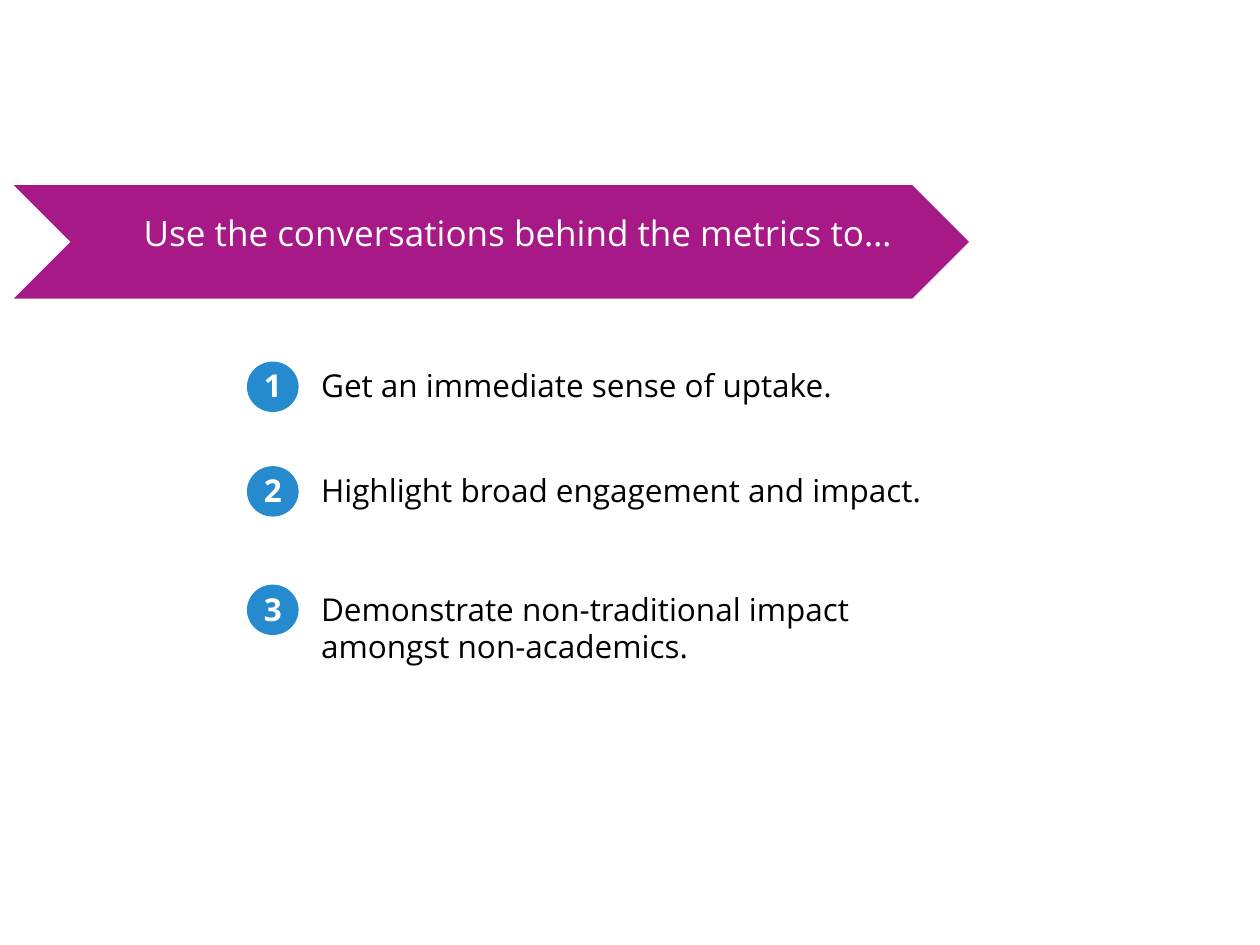
from dataclasses import dataclass

from pptx import Presentation, util as u
from pptx.dml.color import RGBColor
from pptx.enum import shapes, text

FONT = "Open Sans"
PURPLE, BLUE, WHITE, BLACK = "A61987", "268ACE", "FFFFFF", "000000"
BADGE_LEFT, BADGE_WIDTH, LINE_HEIGHT = 1.96, 0.41, 0.4
TEXT_LEFT = 2.45


@dataclass
class Benefit:
    number: int
    wording: str
    top: float
    width: float
    height: float = LINE_HEIGHT


BENEFITS = [
    Benefit(1, "Get an immediate sense of uptake.", 2.86, 5.38),
    Benefit(2, "Highlight broad engagement and impact.", 3.69, 5.38),
    Benefit(3, "Demonstrate non-traditional impact amongst non-academics.",
            4.63, 4.93, 0.71),
]


def rgb(value: str) -> RGBColor:
    return RGBColor.from_string(value)


def set_attributes(target, values: dict) -> None:
    for name, value in values.items():
        setattr(target, name, value)


def write(sp, wording: str, size: int, color: str, bold: bool = False,
          align=text.PP_ALIGN.LEFT) -> None:
    tf = sp.text_frame
    set_attributes(tf, {"word_wrap": True,
                        "auto_size": text.MSO_AUTO_SIZE.NONE,
                        "vertical_anchor": text.MSO_ANCHOR.TOP})
    p = tf.paragraphs[0]
    p.alignment = align
    r = p.add_run()
    r.text = wording
    set_attributes(r.font, {"name": FONT, "size": u.Pt(size), "bold": bold})
    r.font.color.rgb = rgb(color)


def add_filled(parent, kind, box: tuple, color: str):
    sp = parent.add_shape(kind, *map(u.Inches, box))
    sp.shadow.inherit = False
    sp.fill.solid()
    sp.fill.fore_color.rgb = rgb(color)
    sp.line.fill.background()
    return sp


def add_heading(s, wording: str) -> None:
    banner = add_filled(s.shapes, shapes.MSO_SHAPE.CHEVRON,
                        (0.11, 1.47, 7.58, 0.9), PURPLE)
    title = s.shapes.title
    set_attributes(title, {"left": u.Inches(1.04), "top": u.Inches(1.63),
                           "width": u.Inches(7.93), "height": u.Inches(0.86)})
    write(title, wording, 20, WHITE)
    title.element.addprevious(banner.element)


def add_benefit(s, benefit: Benefit) -> None:
    badge = s.shapes.add_group_shape().shapes
    add_filled(badge, shapes.MSO_SHAPE.OVAL,
               (BADGE_LEFT, benefit.top + 0.01, BADGE_WIDTH, LINE_HEIGHT), BLUE)
    number = badge.add_textbox(*map(u.Inches, (
        BADGE_LEFT, benefit.top, BADGE_WIDTH, LINE_HEIGHT)))
    write(number, str(benefit.number), 18, WHITE, True, text.PP_ALIGN.CENTER)
    label = s.shapes.add_textbox(*map(u.Inches, (
        TEXT_LEFT, benefit.top, benefit.width, benefit.height)))
    write(label, benefit.wording, 18, BLACK)


def main() -> None:
    prs = Presentation()
    set_attributes(prs, {"slide_width": u.Inches(10),
                         "slide_height": u.Inches(7.5)})
    s = prs.slides.add_slide(prs.slide_layouts.get_by_name("Title Only"))
    add_heading(s, "Use the conversations behind the metrics to…")
    for benefit in BENEFITS:
        add_benefit(s, benefit)
    prs.save("out.pptx")


if __name__ == "__main__":
    main()
